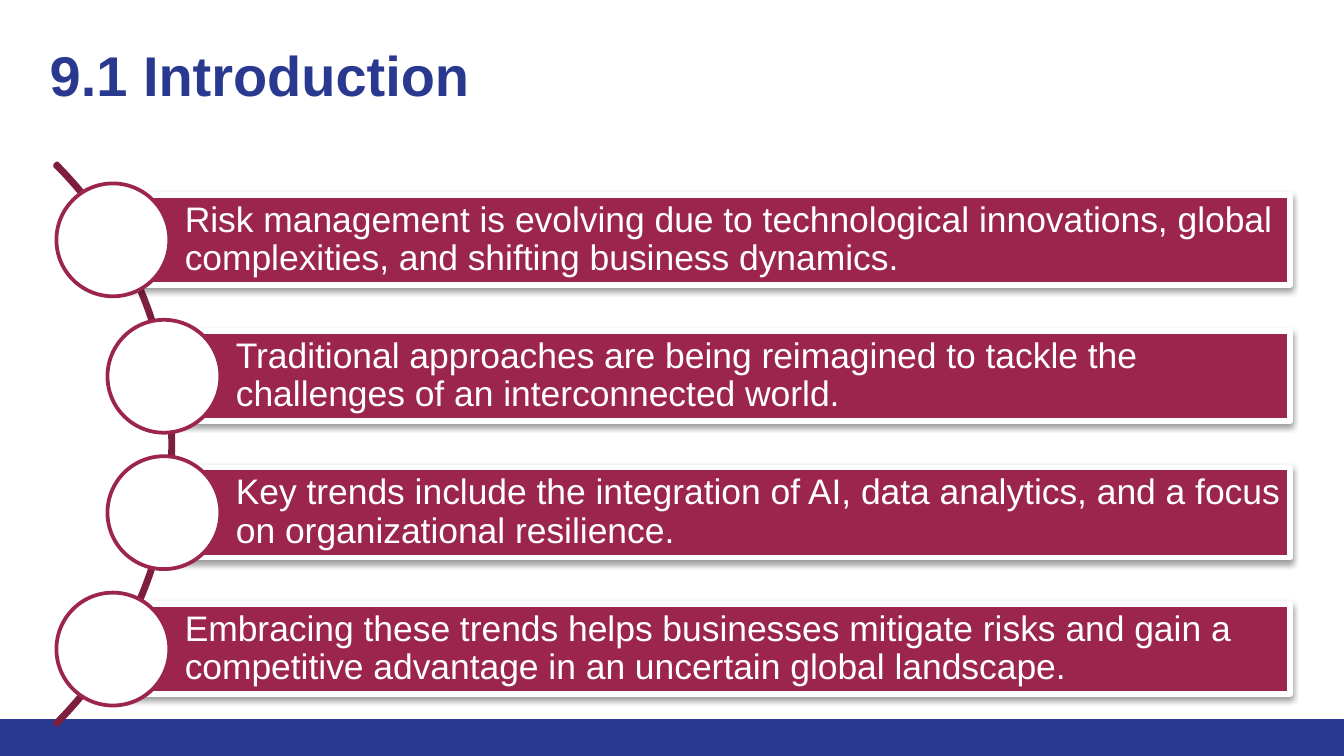
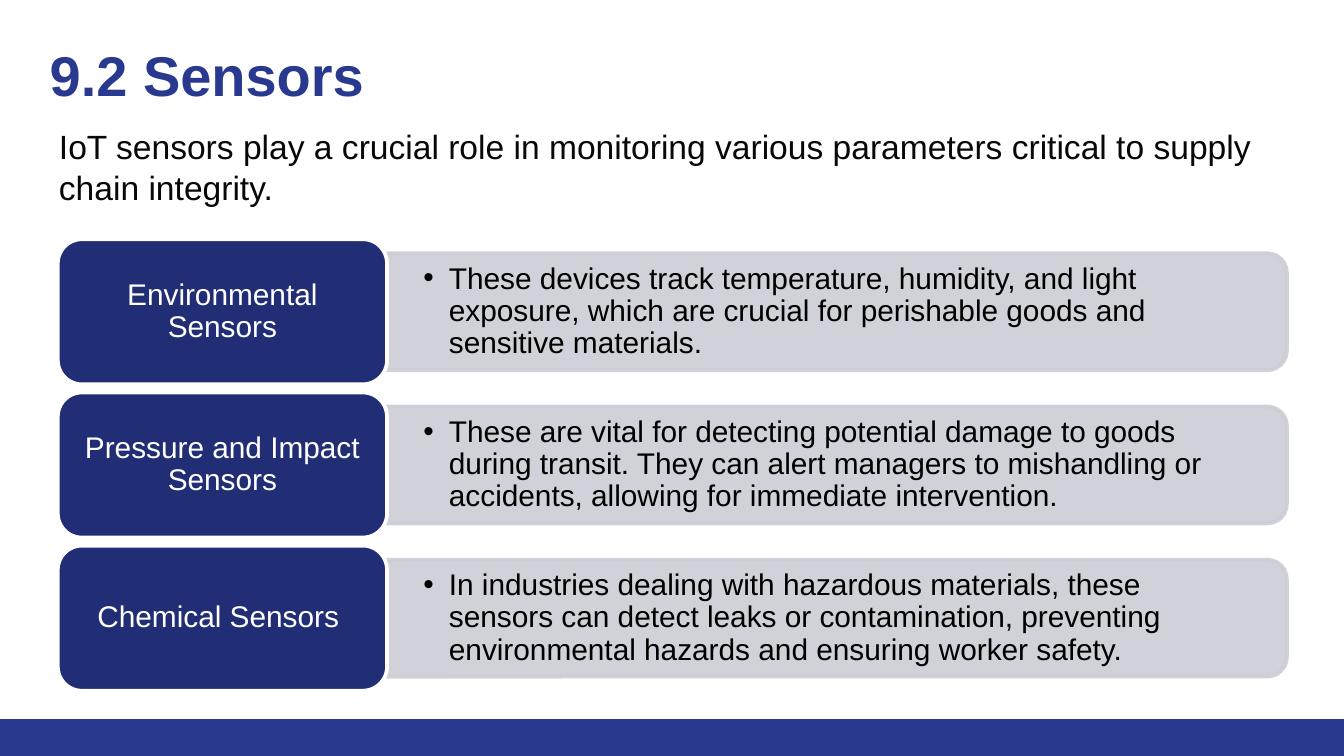
from dataclasses import dataclass

import pptx
import pptx.dml.color
import pptx.enum.shapes
import pptx.enum.text
import pptx.oxml
import pptx.oxml.ns
import pptx.presentation
import pptx.shapes.autoshape
import pptx.slide
import pptx.text.text
import pptx.util
from lxml import etree

RGBColor = pptx.dml.color.RGBColor
Pt = pptx.util.Pt
MSO_SHAPE = pptx.enum.shapes.MSO_SHAPE
MSO_ANCHOR = pptx.enum.text.MSO_ANCHOR
PP_ALIGN = pptx.enum.text.PP_ALIGN
qn = pptx.oxml.ns.qn

EMU_PER_PX = 4572  # 200 px to the inch
SLIDE_WIDTH, SLIDE_HEIGHT = 2000, 1125
BAND_TOP = 1070
TITLE_ONLY_LAYOUT = 5
FONT = "Arial"

BLUE = RGBColor(0x2A, 0x39, 0x90)
NAVY = RGBColor(0x21, 0x2D, 0x74)
CRIMSON = RGBColor(0x9C, 0x25, 0x4D)
DARK_CRIMSON = RGBColor(0x7D, 0x1E, 0x3E)
PALE_GREY = RGBColor(0xCD, 0xCD, 0xD6)
WHITE = RGBColor(0xFF, 0xFF, 0xFF)
BLACK = RGBColor(0x00, 0x00, 0x00)
NEAR_BLACK = RGBColor(0x08, 0x08, 0x08)


@dataclass(frozen=True)
class Box:
    left: int
    top: int
    width: int
    height: int

    def emu(self) -> list[int]:
        return [px(n) for n in (self.left, self.top, self.width, self.height)]


@dataclass(frozen=True)
class TrendBar:
    left: int
    text: str


@dataclass(frozen=True)
class SensorRow:
    name: str
    description: str


TREND_BARS = [
    TrendBar(168, "Risk management is evolving due to technological innovations, "
                  "global complexities, and shifting business dynamics."),
    TrendBar(244, "Traditional approaches are being reimagined to tackle the "
                  "challenges of an interconnected world."),
    TrendBar(244, "Key trends include the integration of AI, data analytics, "
                  "and a focus on organizational resilience."),
    TrendBar(168, "Embracing these trends helps businesses mitigate risks and gain "
                  "a competitive advantage in an uncertain global landscape."),
]
BAR_TOP, BAR_PITCH, BAR_HEIGHT, BAR_RIGHT = 290, 203, 134, 1920
CIRCLE_SIZE = 168

SENSOR_ROWS = [
    SensorRow("Environmental Sensors",
              "These devices track temperature, humidity, and light exposure, "
              "which are crucial for perishable goods and sensitive materials."),
    SensorRow("Pressure and Impact Sensors",
              "These are vital for detecting potential damage to goods during "
              "transit. They can alert managers to mishandling or accidents, "
              "allowing for immediate intervention."),
    SensorRow("Chemical Sensors\u00a0",
              "In industries dealing with hazardous materials, these sensors can "
              "detect leaks or contamination, preventing environmental hazards "
              "and ensuring worker safety."),
]
ROW_TOP, ROW_PITCH, ROW_HEIGHT = 356, 228, 216
NAME_LEFT, NAME_WIDTH = 86, 490
PANEL_LEFT, PANEL_WIDTH, PANEL_HEIGHT = 575, 1340, 174
DESCRIPTION_WIDTH, DESCRIPTION_HEIGHT = 1330, 156
BULLET_INDENT = 38


def px(length: int) -> int:
    return length * EMU_PER_PX


def write_text(text_frame: pptx.text.text.TextFrame, text: str, size: int,
               color: RGBColor, insets: tuple[int, int, int, int],
               anchor: MSO_ANCHOR = MSO_ANCHOR.MIDDLE,
               align: PP_ALIGN = PP_ALIGN.LEFT, line_spacing: float = 0.9,
               bold: bool = False, bullet: bool = False) -> None:
    """Fill a frame with one paragraph; insets run left, top, right, bottom."""
    text_frame.text = text
    text_frame.word_wrap = True
    text_frame.auto_size = pptx.enum.text.MSO_AUTO_SIZE.NONE
    text_frame.vertical_anchor = anchor
    (text_frame.margin_left, text_frame.margin_top,
     text_frame.margin_right, text_frame.margin_bottom) = map(px, insets)
    paragraph = text_frame.paragraphs[0]
    paragraph.alignment = align
    paragraph.line_spacing = line_spacing
    if bullet:
        add_bullet(paragraph)
    font = paragraph.runs[0].font
    font.name, font.size, font.bold = FONT, Pt(size), bold
    font.color.rgb = color


def add_bullet(paragraph: pptx.text.text._Paragraph) -> None:
    properties = paragraph._p.get_or_add_pPr()
    properties.set("marL", str(px(BULLET_INDENT)))
    properties.set("indent", str(-px(BULLET_INDENT)))
    bullet_color = etree.SubElement(properties, qn("a:buClr"))
    etree.SubElement(bullet_color, qn("a:srgbClr"), val=str(BLACK))
    etree.SubElement(properties, qn("a:buFont"), typeface=FONT)
    etree.SubElement(properties, qn("a:buChar"), char="•")


def add_shape(slide: pptx.slide.Slide, kind: MSO_SHAPE, box: Box,
              fill: RGBColor | None, line: RGBColor | None = None,
              line_width: int = 2) -> pptx.shapes.autoshape.Shape:
    shape = slide.shapes.add_shape(kind, *box.emu())
    shape.shadow.inherit = False
    if fill is None:
        shape.fill.background()
    else:
        shape.fill.solid()
        shape.fill.fore_color.rgb = fill
    if line is None:
        shape.line.fill.background()
    else:
        shape.line.color.rgb = line
        shape.line.width = Pt(line_width)
    return shape


def add_drop_shadow(shape: pptx.shapes.autoshape.Shape) -> None:
    effects = shape._element.spPr.find(qn("a:effectLst"))
    shadow = etree.SubElement(effects, qn("a:outerShdw"), blurRad=str(Pt(3.1)),
                              dist=str(Pt(1.6)), dir="5400000", rotWithShape="0")
    color = etree.SubElement(shadow, qn("a:srgbClr"), val=str(BLACK))
    etree.SubElement(color, qn("a:alpha"), val="38000")


def set_opacity(shape: pptx.shapes.autoshape.Shape, percent: int) -> None:
    for color in shape._element.spPr.iter(qn("a:srgbClr")):
        etree.SubElement(color, qn("a:alpha"), val=str(percent * 1000))


def add_titled_slide(presentation: pptx.presentation.Presentation,
                     title: str) -> pptx.slide.Slide:
    """Add a slide with the shared title style and bottom band."""
    slide = presentation.slides.add_slide(
        presentation.slide_layouts[TITLE_ONLY_LAYOUT])
    add_shape(slide, MSO_SHAPE.RECTANGLE,
              Box(0, BAND_TOP, SLIDE_WIDTH, SLIDE_HEIGHT - BAND_TOP), BLUE)
    placeholder = slide.shapes.title
    (placeholder.left, placeholder.top,
     placeholder.width, placeholder.height) = Box(54, 40, 1840, 178).emu()
    write_text(placeholder.text_frame, title, 30, BLUE, (20, 20, 20, 20),
               anchor=MSO_ANCHOR.TOP, line_spacing=1.0, bold=True)
    return slide


def add_trend_bar(slide: pptx.slide.Slide, bar: TrendBar, top: int) -> None:
    rectangle = add_shape(slide, MSO_SHAPE.RECTANGLE,
                          Box(bar.left, top, BAR_RIGHT - bar.left, BAR_HEIGHT),
                          CRIMSON, WHITE, 3)
    add_drop_shadow(rectangle)
    write_text(rectangle.text_frame, bar.text, 19, WHITE, (107, 10, 10, 10))
    add_shape(slide, MSO_SHAPE.OVAL,
              Box(bar.left - CIRCLE_SIZE // 2, top + (BAR_HEIGHT - CIRCLE_SIZE) // 2,
                  CIRCLE_SIZE, CIRCLE_SIZE), WHITE, CRIMSON)


def add_sensor_row(slide: pptx.slide.Slide, row: SensorRow, top: int) -> None:
    middle = top + ROW_HEIGHT // 2
    # The panel stands upright before its quarter turn, about the same centre.
    panel = add_shape(slide, MSO_SHAPE.ROUND_2_SAME_RECTANGLE,
                      Box(PANEL_LEFT + (PANEL_WIDTH - PANEL_HEIGHT) // 2,
                          middle - PANEL_WIDTH // 2, PANEL_HEIGHT, PANEL_WIDTH),
                      PALE_GREY, PALE_GREY)
    panel.rotation = 90
    set_opacity(panel, 90)

    description = slide.shapes.add_textbox(
        *Box(NAME_LEFT + NAME_WIDTH, middle - DESCRIPTION_HEIGHT // 2,
             DESCRIPTION_WIDTH, DESCRIPTION_HEIGHT).emu())
    write_text(description.text_frame, row.description, 16, BLACK,
               (54, 28, 54, 28), bullet=True)

    name = add_shape(slide, MSO_SHAPE.ROUNDED_RECTANGLE,
                     Box(NAME_LEFT, top, NAME_WIDTH, ROW_HEIGHT), NAVY, WHITE)
    write_text(name.text_frame, row.name, 16, WHITE, (14, 6, 14, 6),
               align=PP_ALIGN.CENTER)


def build_introduction(presentation: pptx.presentation.Presentation) -> None:
    slide = add_titled_slide(presentation, "9.1 Introduction")
    arc = add_shape(slide, MSO_SHAPE.BLOCK_ARC, Box(-924, 70, 1182, 1182),
                    None, DARK_CRIMSON)
    # Start and end angles in units of 100000/60000 degree, then thickness.
    arc.adjustments[0] = 189
    arc.adjustments[1] = 27
    arc.adjustments[2] = 0.004
    for index, bar in enumerate(TREND_BARS):
        add_trend_bar(slide, bar, BAR_TOP + index * BAR_PITCH)


def build_sensors(presentation: pptx.presentation.Presentation) -> None:
    slide = add_titled_slide(presentation, "9.2 Sensors")
    summary = slide.shapes.add_textbox(*Box(68, 178, 1864, 142).emu())
    write_text(summary.text_frame,
               "IoT sensors play a crucial role in monitoring various parameters "
               "critical to supply chain integrity.",
               18, NEAR_BLACK, (20, 10, 20, 10),
               anchor=MSO_ANCHOR.TOP, line_spacing=1.0)
    for index, row in enumerate(SENSOR_ROWS):
        add_sensor_row(slide, row, ROW_TOP + index * ROW_PITCH)


def main() -> None:
    presentation = pptx.Presentation()
    presentation.slide_width = px(SLIDE_WIDTH)
    presentation.slide_height = px(SLIDE_HEIGHT)
    build_introduction(presentation)
    build_sensors(presentation)
    presentation.save("out.pptx")


if __name__ == "__main__":
    main()
